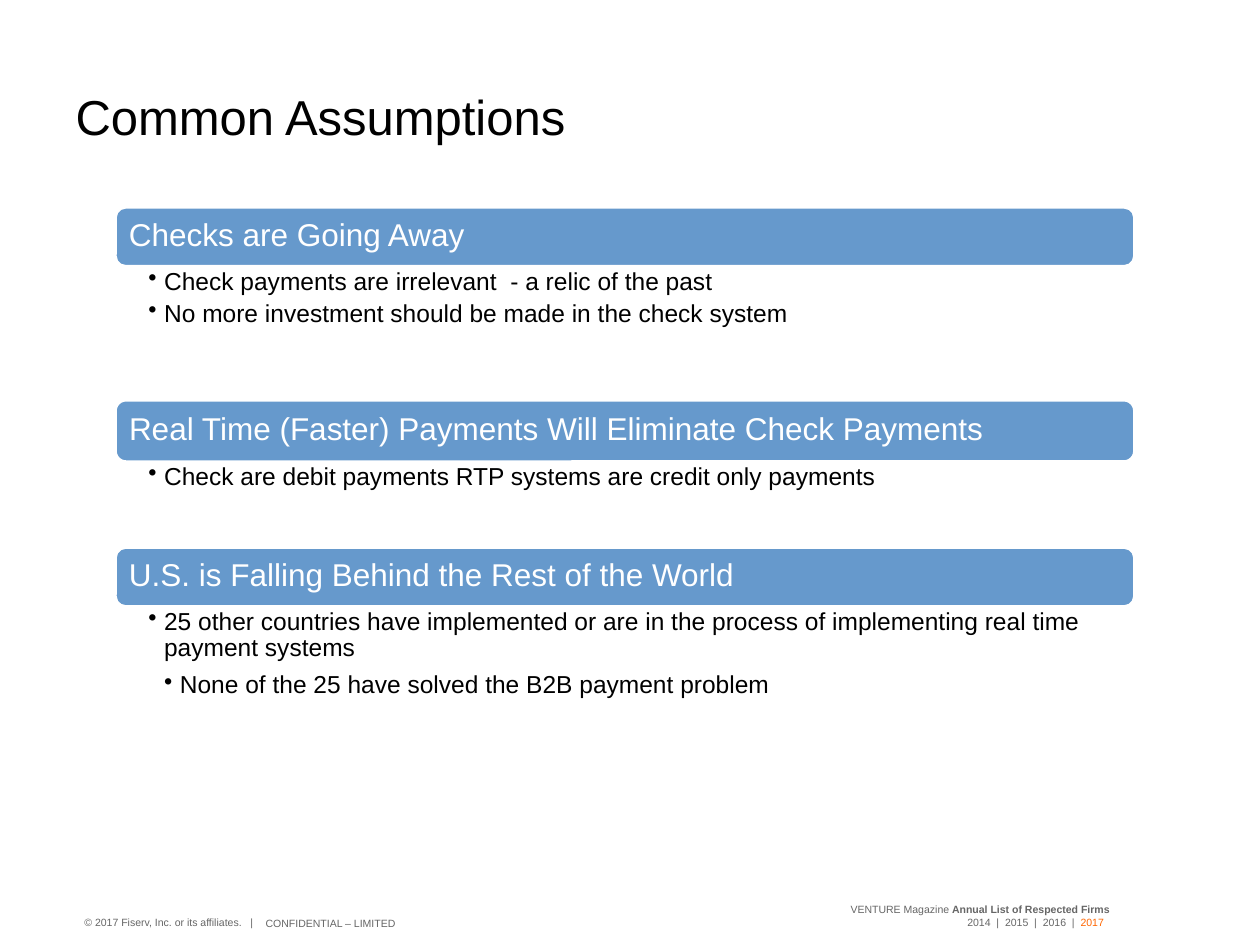
"""Build the Common Assumptions slide with three headed bullet groups."""
from dataclasses import dataclass

from lxml import etree
from pptx import Presentation
from pptx.dml.color import RGBColor
from pptx.enum import shapes, text
from pptx.oxml import ns
from pptx.util import Pt

FONT = "Arial"
BLACK, WHITE, GRAY, BLUE, ORANGE = "000000", "FFFFFF", "666666", "6699CC", "FF6600"
LEFT, WIDTH, FIRST_TOP = 66.24, 581.76, 118.8
INDENT = 9


@dataclass(frozen=True)
class Span:
    words: str
    size: float = 6
    color: str = GRAY
    bold: bool = False


@dataclass(frozen=True)
class Bullet:
    words: str
    level: int = 1
    after: float = 3.2


@dataclass(frozen=True)
class Section:
    heading: str
    bar_height: float
    body_height: float
    bullets: tuple[Bullet, ...]


@dataclass(frozen=True)
class Note:
    box: tuple[float, float, float, float]
    insets: tuple[float, float, float, float]
    lines: tuple[tuple[Span, ...], ...]
    format: dict
    right_indents: tuple[float, ...] = (0,)


SECTIONS = (
    Section("Checks are Going Away", 33.12, 77.04, (
        Bullet("Check payments are irrelevant  - a relic of the past"),
        Bullet("No more investment should be made in the check system"),
    )),
    Section("Real Time (Faster) Payments Will Eliminate Check Payments", 34.56, 49.68, (
        Bullet("Check are debit payments RTP systems are credit only payments"),
    )),
    Section("U.S. is Falling Behind the Rest of the World", 33.12, 77.04, (
        Bullet("25 other countries have implemented or are in the process of "
               "implementing real time payment systems", after=6),
        Bullet("None of the 25 have solved the B2B payment problem", level=2),
    )),
)

NOTES = (
    Note((43.2, 522, 120.24, 11.52), (5.04, 2.16, 5.04, 2.16),
         ((Span("© 2017 Fiserv, Inc. or its affiliates.   |"),),),
         {"line_spacing": 0.9}),
    Note((144.72, 520.56, 109.44, 14.4), (7.2, 3.6, 7.2, 3.6),
         ((Span("CONFIDENTIAL – LIMITED"),),), {}),
    Note((467.28, 511.92, 175.68, 23.76), (0, 3.6, 8.87, 3.6),
         ((Span("VENTURE Magazine "),
           Span("Annual List of Respected Firms", bold=True)),
          (Span("2014  |  2015  |  2016  |  "), Span("2017", color=ORANGE))),
         {"alignment": text.PP_ALIGN.RIGHT, "line_spacing": Pt(7.5)},
         (0, 3.3)),
)


def rgb(color: str) -> RGBColor:
    """Turn a hex string into a colour."""
    return RGBColor.from_string(color)


def apply(target, values: dict) -> None:
    """Set each named attribute on the target."""
    for name, value in values.items():
        setattr(target, name, value)


def set_frame(frame, insets, anchor=text.MSO_ANCHOR.TOP) -> None:
    """Wrap a text frame and set its insets and anchor."""
    sides = ("margin_left", "margin_top", "margin_right", "margin_bottom")
    apply(frame, dict(zip(sides, map(Pt, insets))))
    apply(frame, {"word_wrap": True, "auto_size": text.MSO_AUTO_SIZE.NONE,
                  "vertical_anchor": anchor})


def next_para(frame, index: int):
    """Return the first paragraph of a frame or add another."""
    return frame.paragraphs[0] if index == 0 else frame.add_paragraph()


def add_span(para, item: Span) -> None:
    """Add one formatted run to a paragraph."""
    span = para.add_run()
    span.text = item.words
    apply(span.font, {"name": FONT, "size": Pt(item.size), "bold": item.bold})
    span.font.color.rgb = rgb(item.color)


def add_box(page, bounds):
    """Add a text box with bounds in points."""
    return page.shapes.add_textbox(*map(Pt, bounds))


def add_heading(page, section: Section, top: float) -> None:
    """Draw the rounded bar that holds a section heading."""
    bar = page.shapes.add_shape(
        shapes.MSO_SHAPE.ROUNDED_RECTANGLE,
        *map(Pt, (LEFT, top, WIDTH, section.bar_height)))
    bar.shadow.inherit = False
    bar.fill.solid()
    bar.fill.fore_color.rgb = rgb(BLUE)
    bar.line.color.rgb = rgb(WHITE)
    bar.line.width = Pt(1)
    set_frame(bar.text_frame, (5.8, 4.5, 5, 5.5), text.MSO_ANCHOR.MIDDLE)
    para = bar.text_frame.paragraphs[0]
    apply(para, {"alignment": text.PP_ALIGN.LEFT, "line_spacing": 0.9})
    add_span(para, Span(section.heading, 18, WHITE))


def add_bullets(page, section: Section, top: float) -> None:
    """Draw the bulleted text below a heading."""
    box = add_box(page, (LEFT, top, WIDTH, section.body_height))
    set_frame(box.text_frame, (18.5, 1.8, 10.08, 2.16))
    for index, item in enumerate(section.bullets):
        para = next_para(box.text_frame, index)
        apply(para, {"level": item.level, "line_spacing": 0.9,
                     "space_after": Pt(item.after)})
        properties = para._p.get_or_add_pPr()
        properties.set("marL", str(Pt(INDENT * item.level)))
        properties.set("indent", str(-Pt(INDENT)))
        etree.SubElement(properties, ns.qn("a:buChar")).set("char", "•")
        add_span(para, Span(item.words, 14, BLACK))


def add_note(page, note: Note) -> None:
    """Draw one small text at the foot of the page."""
    box = add_box(page, note.box)
    set_frame(box.text_frame, note.insets)
    for index, (line, indent) in enumerate(zip(note.lines, note.right_indents)):
        para = next_para(box.text_frame, index)
        apply(para, note.format)
        para._p.get_or_add_pPr().set("marR", str(Pt(indent)))
        for item in line:
            add_span(para, item)


def add_title(page, words: str) -> None:
    """Place and format the title placeholder."""
    title = page.shapes.title
    apply(title, {"left": Pt(36), "top": Pt(18.72),
                  "width": Pt(678.24), "height": Pt(68.4)})
    set_frame(title.text_frame, (7.2, 3.6, 7.2, 3.6), text.MSO_ANCHOR.BOTTOM)
    para = title.text_frame.paragraphs[0]
    apply(para, {"alignment": text.PP_ALIGN.LEFT, "line_spacing": 0.9})
    add_span(para, Span(words, 28, BLACK))


def main() -> None:
    """Build and save the deck."""
    deck = Presentation()
    apply(deck, {"slide_width": Pt(720), "slide_height": Pt(540)})
    page = deck.slides.add_slide(deck.slide_layouts[5])
    add_title(page, "Common Assumptions")
    top = FIRST_TOP
    for section in SECTIONS:
        add_heading(page, section, top)
        top += section.bar_height
        add_bullets(page, section, top)
        top += section.body_height
    for note in NOTES:
        add_note(page, note)
    deck.save("out.pptx")


if __name__ == "__main__":
    main()
